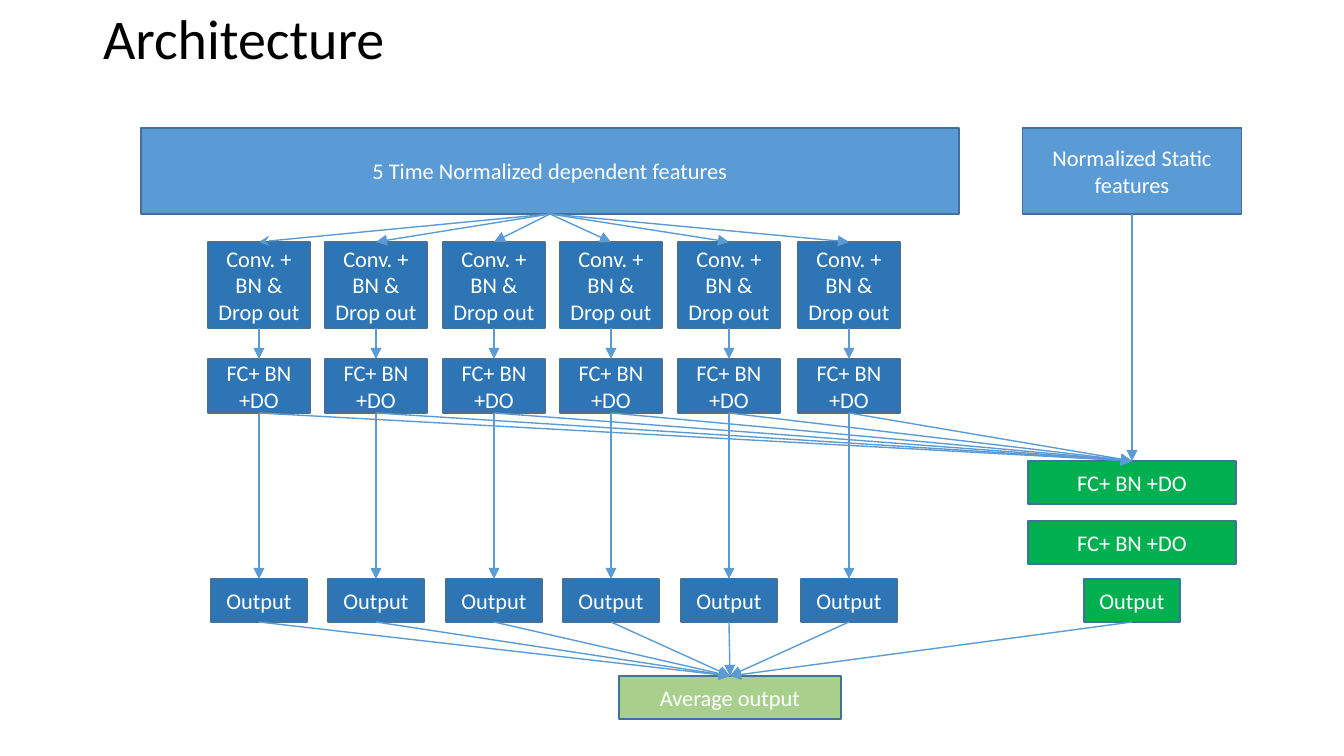
import pptx
import pptx.dml.color
import pptx.enum.shapes
import pptx.enum.text
import pptx.oxml.ns
import pptx.util
from lxml import etree

# Content: label paragraphs of each kind of box
TITLE = "Architecture"
CONV = ["Conv. +", "BN & Drop out"]
DENSE = ["FC+ BN +DO"]
OUTPUT = ["Output"]
TIME_INPUT = ["5 Time Normalized dependent features"]
STATIC_INPUT = ["Normalized Static features"]
AVERAGE = ["Average output"]

# Layout in px: box centres, tops and sizes
PAGE_SIZE = (1344, 756)
TITLE_AREA = (93, 15, 1158, 52)
INSETS = (10, 5)
BRANCH_CENTRES = [259, 376, 494, 611, 729, 849]
TIME_CENTRE, STATIC_CENTRE, AVERAGE_CENTRE = 550, 1132, 730
INPUT_TOP, CONV_TOP, DENSE_TOP, OUTPUT_TOP, AVERAGE_TOP = 128, 242, 359, 579, 676
STATIC_DENSE_TOPS = [461, 521]
TIME_SIZE, STATIC_SIZE = (818, 86), (219, 86)
CONV_SIZE, DENSE_SIZE = (102, 86), (102, 54)
STATIC_DENSE_SIZE, OUTPUT_SIZE, AVERAGE_SIZE = (208, 43), (96, 43), (222, 43)

THEME = {
    "font": "Calibri", "title_size": 30, "label_size": 12,
    "title": "000000", "label": "FFFFFF",
    "input": "5B9BD5", "branch": "2E75B5", "static": "00B050", "average": "A8D08C",
    "border": "42719B", "arrow": "5B9BD5",
    "border_width": 1, "arrow_width": 0.75,
}
EMU_PER_PX = 914400 / 134.4
BOTTOM_SITE, TOP_SITE = 2, 0


def px(length):
    return pptx.util.Emu(round(length * EMU_PER_PX))


def colour(name):
    return pptx.dml.color.RGBColor.from_string(THEME[name])


def write(frame, lines, size, ink, align, spacing=None):
    """Fill a text frame with one paragraph per line."""
    frame.word_wrap = True
    frame.auto_size = pptx.enum.text.MSO_AUTO_SIZE.NONE
    frame.vertical_anchor = pptx.enum.text.MSO_ANCHOR.MIDDLE
    frame.margin_left = frame.margin_right = px(INSETS[0])
    frame.margin_top = frame.margin_bottom = px(INSETS[1])
    for index, line in enumerate(lines):
        para = frame.add_paragraph() if index else frame.paragraphs[0]
        para.alignment = align
        para.line_spacing = spacing
        span = para.add_run()
        span.text = line
        span.font.name = THEME["font"]
        span.font.size = pptx.util.Pt(THEME[size])
        span.font.color.rgb = colour(ink)


def add_box(page, lines, centre, top, size, fill):
    width, height = size
    box = page.shapes.add_shape(
        pptx.enum.shapes.MSO_SHAPE.RECTANGLE,
        px(centre - width / 2), px(top), px(width), px(height))
    box.shadow.inherit = False
    box.fill.solid()
    box.fill.fore_color.rgb = colour(fill)
    box.line.color.rgb = colour("border")
    box.line.width = pptx.util.Pt(THEME["border_width"])
    write(box.text_frame, lines, "label_size", "label", pptx.enum.text.PP_ALIGN.CENTER)
    return box


def add_arrow(page, source, target, head="triangle"):
    """Join the bottom of one box to the top of another."""
    arrow = page.shapes.add_connector(
        pptx.enum.shapes.MSO_CONNECTOR.STRAIGHT, 0, 0, 0, 0)
    arrow.begin_connect(source, BOTTOM_SITE)
    arrow.end_connect(target, TOP_SITE)
    arrow.line.color.rgb = colour("arrow")
    arrow.line.width = pptx.util.Pt(THEME["arrow_width"])
    qn = pptx.oxml.ns.qn
    properties = arrow.line._get_or_add_ln()
    etree.SubElement(properties, qn("a:tailEnd"), type=head, w="med", len="med")
    etree.SubElement(arrow._element.spPr, qn("a:effectLst"))


def main():
    deck = pptx.Presentation()
    deck.slide_width, deck.slide_height = map(px, PAGE_SIZE)
    page = deck.slides.add_slide(deck.slide_layouts[5])

    # Title
    title = page.shapes.title
    title.left, title.top, title.width, title.height = map(px, TITLE_AREA)
    write(title.text_frame, [TITLE], "title_size", "title",
          pptx.enum.text.PP_ALIGN.LEFT, 0.9)

    # One convolution, dense and output box per branch
    convs, denses, outputs = [
        [add_box(page, lines, centre, top, size, "branch") for centre in BRANCH_CENTRES]
        for lines, top, size in [
            (CONV, CONV_TOP, CONV_SIZE),
            (DENSE, DENSE_TOP, DENSE_SIZE),
            (OUTPUT, OUTPUT_TOP, OUTPUT_SIZE),
        ]
    ]

    # Inputs, static branch and average
    time_input = add_box(page, TIME_INPUT, TIME_CENTRE, INPUT_TOP, TIME_SIZE, "input")
    static_input = add_box(page, STATIC_INPUT, STATIC_CENTRE, INPUT_TOP, STATIC_SIZE, "input")
    static_denses = [add_box(page, DENSE, STATIC_CENTRE, top, STATIC_DENSE_SIZE, "static")
                     for top in STATIC_DENSE_TOPS]
    static_output = add_box(page, OUTPUT, STATIC_CENTRE, OUTPUT_TOP, OUTPUT_SIZE, "static")
    average = add_box(page, AVERAGE, AVERAGE_CENTRE, AVERAGE_TOP, AVERAGE_SIZE, "average")

    # Arrows of each branch, then those of the static branch
    for index, (conv, dense, output) in enumerate(zip(convs, denses, outputs)):
        add_arrow(page, time_input, conv, "triangle" if index else "stealth")
        add_arrow(page, conv, dense)
        add_arrow(page, dense, static_denses[0])
        add_arrow(page, dense, output)
        add_arrow(page, output, average)
    add_arrow(page, static_output, average)
    add_arrow(page, static_input, static_denses[0])

    deck.save("out.pptx")


if __name__ == "__main__":
    main()
